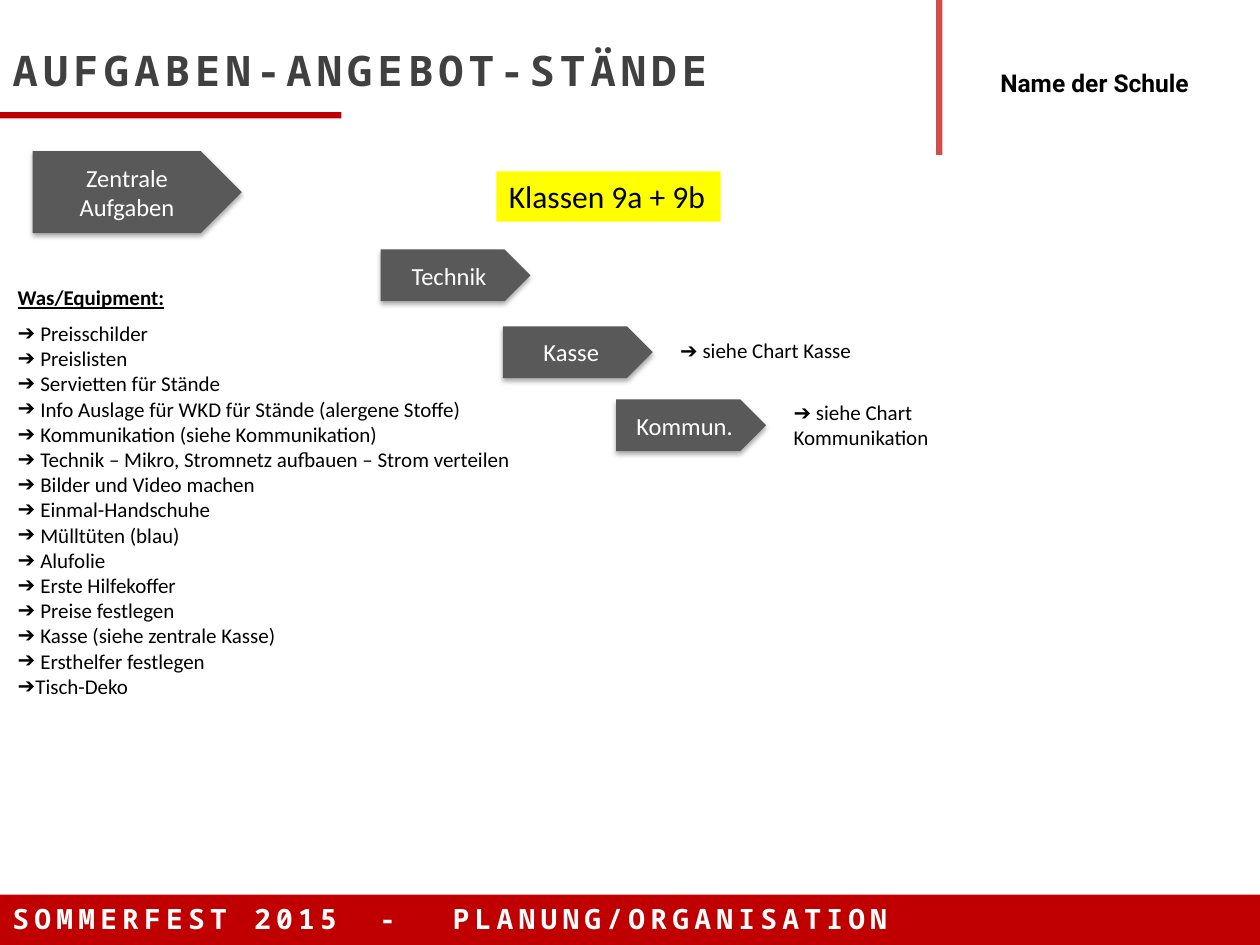
from dataclasses import dataclass

from lxml import etree
from pptx import Presentation
from pptx.dml.color import RGBColor
from pptx.enum import shapes, text
from pptx.oxml.ns import qn
from pptx.util import Inches, Pt


@dataclass(frozen=True)
class Theme:
    red: str = "C00000"
    gray: str = "595959"
    title_gray: str = "404040"
    yellow: str = "FFFF00"
    black: str = "000000"
    white: str = "FFFFFF"
    body_font: str = "Calibri"
    mono_font: str = "Noto Sans Mono"
    school_font: str = "Roboto"
    title_size: float = 24
    highlight_size: float = 18
    footer_size: float = 16
    label_size: float = 14
    body_size: float = 12
    tracking: float = 3


T = Theme()
ARROW = "➔"
TASKS = [
    "Preisschilder",
    "Preislisten",
    "Servietten für Stände",
    "Info Auslage für WKD für Stände (alergene Stoffe)",
    "Kommunikation (siehe Kommunikation)",
    "Technik – Mikro, Stromnetz aufbauen – Strom verteilen",
    "Bilder und Video machen",
    "Einmal-Handschuhe",
    "Mülltüten (blau)",
    "Alufolie",
    "Erste Hilfekoffer",
    "Preise festlegen",
    "Kasse (siehe zentrale Kasse)",
    "Ersthelfer festlegen",
    "Tisch-Deko",
]
STEPS = [
    ("Zentrale Aufgaben", (0.26, 1.2, 1.66, 0.65)),
    ("Technik", (3.02, 1.98, 1.19, 0.41)),
    ("Kasse", (3.99, 2.59, 1.19, 0.41)),
    ("Kommun.", (4.89, 3.17, 1.19, 0.41)),
]


def box(values):
    return [Inches(v) for v in values]


def add_run(p, words, size, color=T.black, font=T.body_font, bold=False, tracking=0):
    r = p.add_run()
    r.text = words
    r.font.size = Pt(size)
    r.font.name = font
    r.font.bold = bold
    r.font.color.rgb = RGBColor.from_string(color)
    if tracking:
        r.font._element.set("spc", str(round(tracking * 100)))
    return r


def add_block(s, at, color, kind=shapes.MSO_SHAPE.RECTANGLE, opacity=100):
    sp = s.shapes.add_shape(kind, *box(at))
    sp.shadow.inherit = False
    sp.fill.solid()
    sp.fill.fore_color.rgb = RGBColor.from_string(color)
    sp.line.fill.background()
    if opacity < 100:
        clr = sp._element.spPr.find(f"{qn('a:solidFill')}/{qn('a:srgbClr')}")
        etree.SubElement(clr, qn("a:alpha"), val=str(opacity * 1000))
    return sp


def add_soft_shadow(sp):
    effects = sp._element.spPr.find(qn("a:effectLst"))
    shadow = etree.SubElement(effects, qn("a:outerShdw"), blurRad=str(Pt(3.1)),
                              dist=str(Pt(1.8)), dir="5400000", rotWithShape="0")
    clr = etree.SubElement(shadow, qn("a:srgbClr"), val=T.black)
    etree.SubElement(clr, qn("a:alpha"), val="35000")


def add_step(s, label, at):
    sp = add_block(s, at, T.gray, shapes.MSO_SHAPE.PENTAGON)
    add_soft_shadow(sp)
    tf = sp.text_frame
    tf.word_wrap = True
    tf.vertical_anchor = text.MSO_ANCHOR.MIDDLE
    p = tf.paragraphs[0]
    p.alignment = text.PP_ALIGN.CENTER
    add_run(p, label, T.label_size, T.white)


def add_text(s, at):
    """Add an unwrapped text box and return its first paragraph."""
    tf = s.shapes.add_textbox(*box(at)).text_frame
    tf.word_wrap = False
    return tf.paragraphs[0]


def place(sp, at):
    sp.left, sp.top, sp.width, sp.height = box(at)
    sp.text_frame.auto_size = text.MSO_AUTO_SIZE.NONE


def set_bullet(p, char=None, hang=0.0):
    pPr = p._p.get_or_add_pPr()
    pPr.set("marL", str(Inches(hang)))
    pPr.set("indent", str(-Inches(hang)))
    if char:
        etree.SubElement(pPr, qn("a:buChar"), char=char)
    else:
        etree.SubElement(pPr, qn("a:buNone"))


def fill_title(s):
    sp = s.shapes.title
    place(sp, (0, 0.3, 6.26, 0.5))
    sp.text_frame.word_wrap = False
    p = sp.text_frame.paragraphs[0]
    p.alignment = text.PP_ALIGN.LEFT
    add_run(p, "AUFGABEN-ANGEBOT-STÄNDE", T.title_size, T.title_gray,
            T.mono_font, True, T.tracking)


def fill_tasks(s):
    sp = s.placeholders[1]
    place(sp, (0.04, 2.21, 4.37, 3.62))
    tf = sp.text_frame
    tf.word_wrap = True
    p = tf.paragraphs[0]
    set_bullet(p)
    p.space_before = Pt(0)
    add_run(p, "Was/Equipment:", T.body_size, bold=True).font.underline = True
    for i, task in enumerate(TASKS):
        p = tf.add_paragraph()
        set_bullet(p, ARROW, 0.14 if task == TASKS[-1] else 0.18)
        p.space_before = Pt(0 if i else 6)
        add_run(p, task, T.body_size)


def add_footer(s):
    add_block(s, (0, 7.1, 10, 0.4), T.red)
    p = add_text(s, (0, 7.11, 7.4, 0.37))
    wide = 11.4  # sets the dash apart from both parts
    for words, tracking in (("SOMMERFEST 2015", T.tracking), (" - ", wide),
                            ("PLANUNG/ORGANISATION", T.tracking)):
        add_run(p, words, T.footer_size, T.white, T.mono_font, True, tracking)


def add_highlight(s):
    sp = add_block(s, (3.94, 1.36, 1.78, 0.4), T.yellow)
    tf = sp.text_frame
    tf.word_wrap = False
    tf.vertical_anchor = text.MSO_ANCHOR.TOP
    p = tf.paragraphs[0]
    p.alignment = text.PP_ALIGN.LEFT
    add_run(p, "Klassen 9a + 9b", T.highlight_size)


def main():
    prs = Presentation()
    prs.slide_width, prs.slide_height = Inches(10), Inches(7.5)
    s = prs.slides.add_slide(prs.slide_layouts[1])

    fill_title(s)
    fill_tasks(s)
    add_footer(s)
    add_block(s, (7.43, 0, 0.05, 1.23), T.red, opacity=70)
    add_block(s, (0, 0.89, 2.71, 0.05), T.red)
    for label, at in STEPS:
        add_step(s, label, at)

    add_run(add_text(s, (5.3, 2.63, 1.61, 0.3)), f"{ARROW} siehe Chart Kasse", T.body_size)
    p = add_text(s, (6.2, 3.12, 1.28, 0.5))
    add_run(p, f"{ARROW} siehe Chart", T.body_size)
    p.add_line_break()
    add_run(p, "Kommunikation", T.body_size)

    add_highlight(s)
    add_run(add_text(s, (7.84, 0.49, 1.75, 0.34)), "Name der Schule",
            T.label_size, font=T.school_font, bold=True)
    prs.save("out.pptx")


if __name__ == "__main__":
    main()
